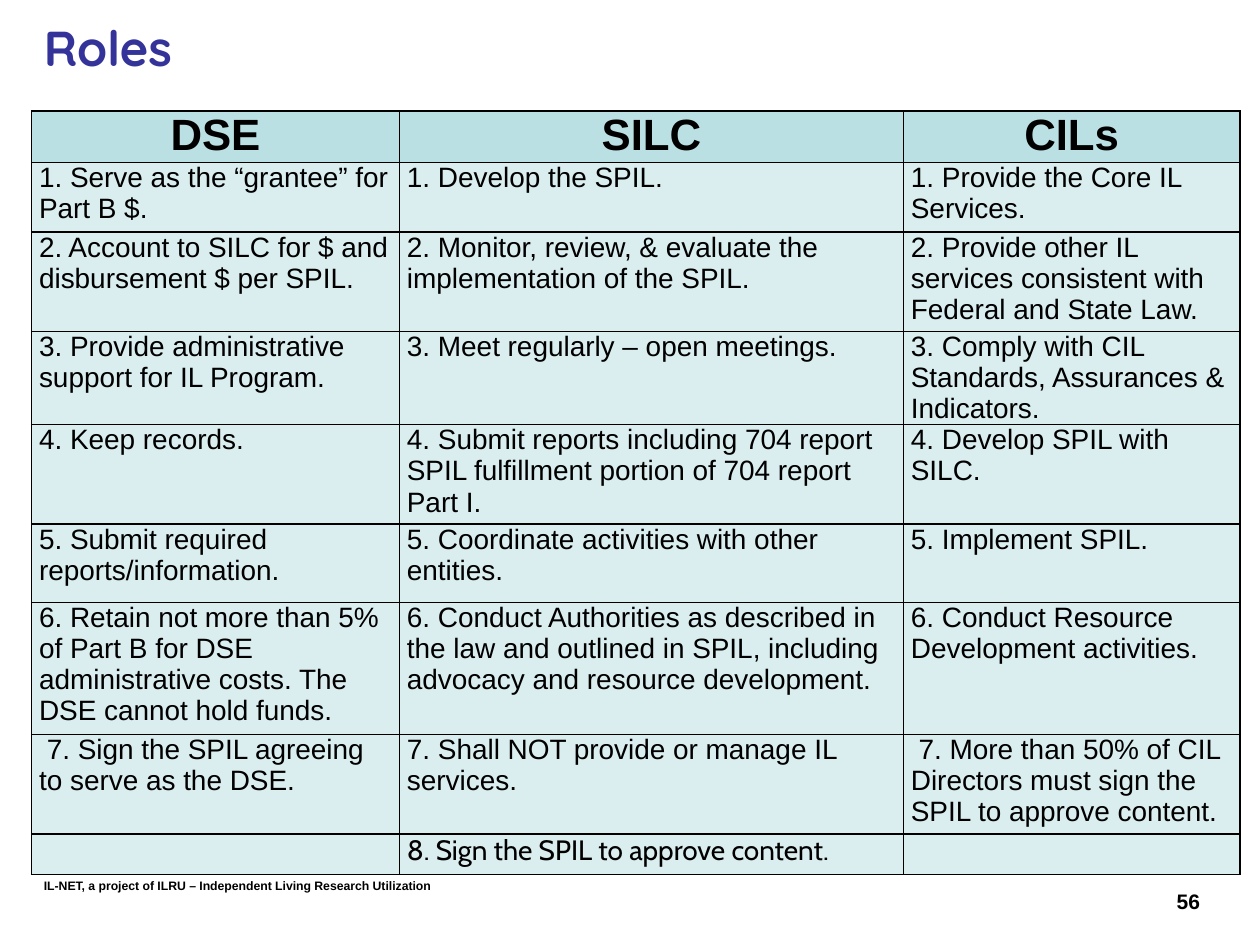
from lxml import etree
from pptx import Presentation
from pptx.dml.color import RGBColor
from pptx.enum import text as t
from pptx.oxml import ns
from pptx.util import Inches, Pt

BLACK = RGBColor(0x00, 0x00, 0x00)
INDIGO = RGBColor(0x33, 0x33, 0x99)
HEADER_FILL = RGBColor(0xBB, 0xE0, 0xE3)
BODY_FILL = RGBColor(0xDA, 0xED, 0xEF)

ROLES = [
    ("DSE", "SILC", "CILs"),
    ("1. Serve as the “grantee” for Part B $.",
     "1. Develop the SPIL.",
     "1. Provide the Core IL Services."),
    ("2. Account to SILC for $ and disbursement $ per SPIL.",
     "2. Monitor, review, & evaluate the implementation of the SPIL.",
     "2. Provide other IL services consistent with Federal and State Law."),
    ("3. Provide administrative support for IL Program.",
     "3. Meet regularly – open meetings.",
     "3. Comply with CIL Standards, Assurances & Indicators."),
    ("4. Keep records.",
     "4. Submit reports including 704 report SPIL fulfillment portion of 704 report Part I.",
     "4. Develop SPIL with SILC."),
    ("5. Submit required reports/information.",
     "5. Coordinate activities with other entities.",
     "5. Implement SPIL."),
    ("6. Retain not more than 5% of Part B for DSE administrative costs. The DSE cannot hold funds.",
     "6. Conduct Authorities as described in the law and outlined in SPIL, including advocacy and resource development.",
     "6. Conduct Resource Development activities."),
    (" 7. Sign the SPIL agreeing to serve as the DSE.",
     "7. Shall NOT provide or manage IL services.",
     " 7. More than 50% of CIL Directors must sign the SPIL to approve content."),
    ("", "8. Sign the SPIL to approve content.", ""),
]
COLUMN_WIDTHS = [2.92, 4, 2.67]
ROW_HEIGHTS = [0.41, 0.55, 0.79, 0.74, 0.79, 0.62, 1.05, 0.79, 0.32]
CELL_FORMAT = {
    "margin_left": Inches(0.06), "margin_right": Inches(0.06),
    "margin_top": 0, "margin_bottom": 0,
}
HEADER_FONT = {"name": "Arial", "size": Pt(25), "bold": True}
BODY_FONT = {"name": "Arial", "size": Pt(16), "bold": False}
LAST_ROW_FONT = {**BODY_FONT, "name": "Cabin"}

# text, (left, top, width, height), font, colour, wraps
LABELS = [
    ("IL-NET, a project of ILRU – Independent Living Research Utilization",
     (0.25, 6.92, 5, 0.22), {"name": "Arial", "size": Pt(7), "bold": True}, BLACK, True),
    ("Roles", (0.25, 0.08, 8.83, 0.58),
     {"name": "Quicksand", "size": Pt(28), "bold": True}, INDIGO, True),
    ("56", (9.24, 7, 0.39, 0.3),
     {"name": "Arial", "size": Pt(12), "bold": True}, BLACK, False),
]


def apply(target, values):
    for name, value in values.items():
        setattr(target, name, value)


def write(paragraph, words, font, color):
    run = paragraph.add_run()
    run.text = words
    apply(run.font, font)
    run.font.color.rgb = color


def add_borders(cell):
    """Draw a 1 pt black line on each side; call before setting the fill."""
    properties = cell._tc.get_or_add_tcPr()
    for side in ("lnL", "lnR", "lnT", "lnB"):
        line = etree.SubElement(properties, ns.qn(f"a:{side}"), w=str(Pt(1)))
        fill = etree.SubElement(line, ns.qn("a:solidFill"))
        etree.SubElement(fill, ns.qn("a:srgbClr"), val=str(BLACK))


def add_label(slide, words, place, font, color, wraps):
    frame = slide.shapes.add_textbox(*map(Inches, place)).text_frame
    frame.word_wrap = wraps
    frame.vertical_anchor = t.MSO_ANCHOR.MIDDLE if words == "Roles" else t.MSO_ANCHOR.TOP
    write(frame.paragraphs[0], words, font, color)


def add_roles_table(slide):
    table = slide.shapes.add_table(
        len(ROLES), len(COLUMN_WIDTHS), Inches(0.25), Inches(0.88),
        Inches(sum(COLUMN_WIDTHS)), Inches(sum(ROW_HEIGHTS))).table
    for column, width in zip(table.columns, COLUMN_WIDTHS):
        column.width = Inches(width)
    for row_index, (row, height, roles) in enumerate(zip(table.rows, ROW_HEIGHTS, ROLES)):
        row.height = Inches(height)
        is_header = row_index == 0
        is_last = row_index == len(ROLES) - 1
        font = HEADER_FONT if is_header else LAST_ROW_FONT if is_last else BODY_FONT
        for cell, role in zip(row.cells, roles):
            apply(cell, CELL_FORMAT)
            add_borders(cell)
            cell.fill.solid()
            cell.fill.fore_color.rgb = HEADER_FILL if is_header else BODY_FILL
            paragraph = cell.text_frame.paragraphs[0]
            if is_header:
                paragraph.alignment = t.PP_ALIGN.CENTER
            if role:
                write(paragraph, role, font, BLACK)


def main():
    deck = Presentation()
    deck.slide_width, deck.slide_height = Inches(10), Inches(7.5)
    slide = deck.slides.add_slide(deck.slide_layouts[6])
    add_roles_table(slide)
    for label in LABELS:
        add_label(slide, *label)
    deck.save("out.pptx")


if __name__ == "__main__":
    main()
